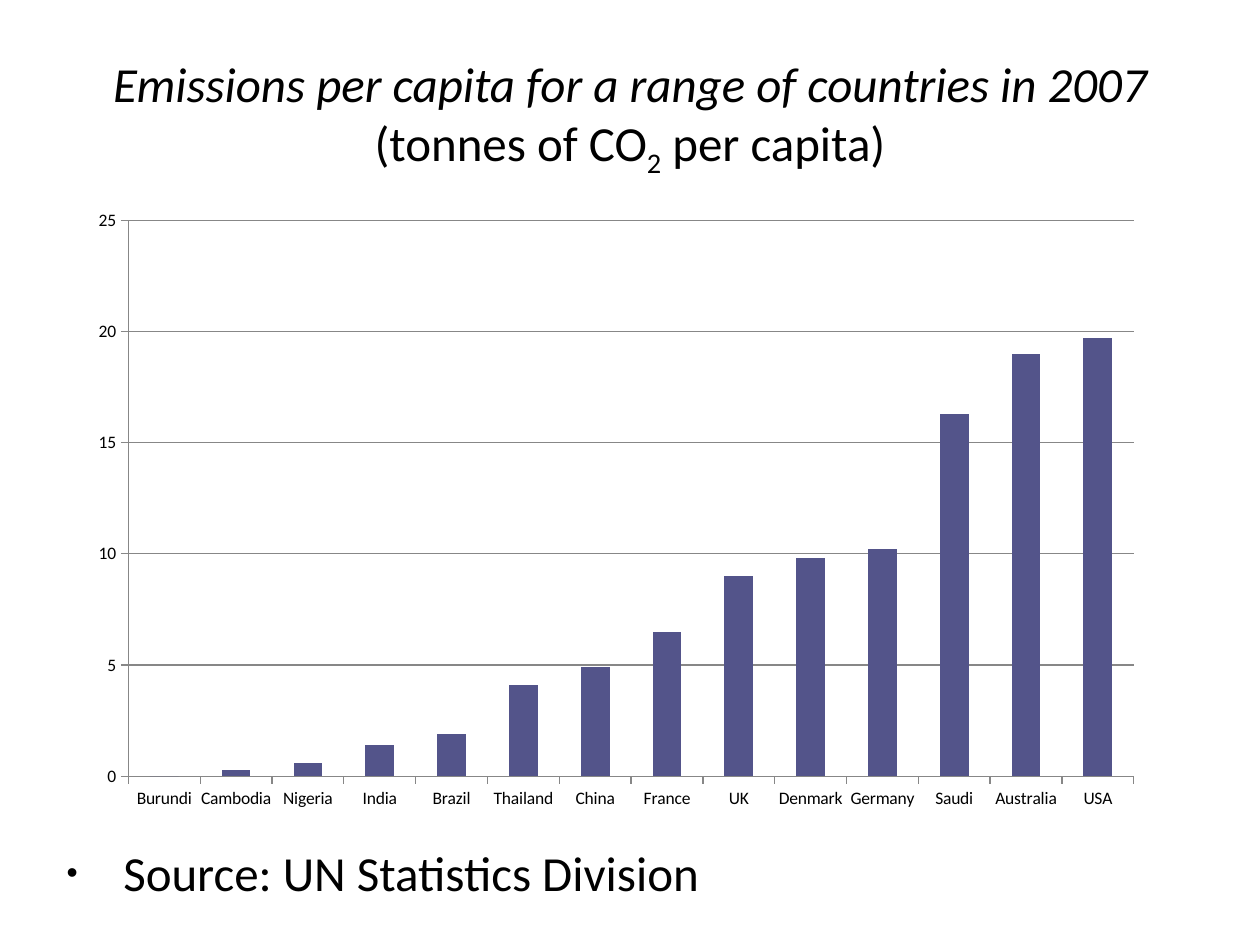
from dataclasses import dataclass
from lxml.etree import SubElement as Sub
from pptx import Presentation
from pptx.chart.data import CategoryChartData as Data
from pptx.dml.color import RGBColor as RGB
from pptx.enum.chart import XL_CHART_TYPE as Kind, XL_TICK_MARK as Tick
from pptx.enum.text import MSO_ANCHOR as Anchor, PP_ALIGN as Align
from pptx.oxml.ns import qn
from pptx.util import Pt

PX = 9144


@dataclass(frozen=True)
class Theme:
    font: str = "Calibri"
    ink: RGB = RGB(0, 0, 0)
    bar: RGB = RGB(0x53, 0x54, 0x8A)
    grid: RGB = RGB(0x87, 0x87, 0x87)
    text: int = 28
    label: int = 10


THEME = Theme()

RATES = {
    "Burundi": 0, "Cambodia": 0.3, "Nigeria": 0.6, "India": 1.4,
    "Brazil": 1.9, "Thailand": 4.1, "China": 4.9, "France": 6.5,
    "UK": 9, "Denmark": 9.8, "Germany": 10.2, "Saudi": 16.3,
    "Australia": 19, "USA": 19.7,
}


def emu(box):
    return [n * PX for n in box]


def style(font, size):
    font.name = THEME.font
    font.size = Pt(size)
    font.color.rgb = THEME.ink


def add_run(para, text, italic=False, base=0):
    run = para.add_run()
    run.text = text
    style(run.font, THEME.text)
    run.font.italic = italic
    if base:
        run.font._element.set("baseline", str(base * 1000))


def add_frame(slide, box, anchor):
    frame = slide.shapes.add_textbox(*emu(box)).text_frame
    frame.word_wrap = True
    frame.vertical_anchor = anchor
    return frame.paragraphs[0]


def add_title(slide, box):
    para = add_frame(slide, box, Anchor.MIDDLE)
    para.alignment = Align.CENTER
    add_run(para, "Emissions per capita for a range of countries in 2007 ", italic=True)
    add_run(para, "(tonnes of CO")
    add_run(para, "2", base=-25)
    add_run(para, " per capita)")


def add_source(slide, box):
    para = add_frame(slide, box, Anchor.TOP)
    props = para._p.get_or_add_pPr()
    props.set("marL", str(60 * PX))
    props.set("indent", str(-45 * PX))
    space = Sub(props, qn("a:spcBef"))
    Sub(space, qn("a:spcPct"), val="20000")
    color = Sub(props, qn("a:buClr"))
    Sub(color, qn("a:srgbClr"), val=str(THEME.ink))
    Sub(props, qn("a:buSzPct"), val="65000")
    Sub(props, qn("a:buFont"), typeface="Arial")
    Sub(props, qn("a:buChar"), char="•")
    add_run(para, "Source: UN Statistics Division")


def set_plot(chart, area):
    plot = chart._chartSpace.chart.plotArea
    for old in plot.findall(qn("c:layout")):
        plot.remove(old)
    layout = Sub(plot, qn("c:layout"))
    plot.insert(0, layout)
    manual = Sub(layout, qn("c:manualLayout"))
    rules = [("layoutTarget", "inner"), ("xMode", "edge"), ("yMode", "edge")]
    for name, val in rules + list(zip("xywh", area)):
        Sub(manual, qn("c:" + name), val=str(val))


def add_bars(slide, box):
    data = Data()
    data.categories = list(RATES)
    data.add_series("Series 1", list(RATES.values()))
    chart = slide.shapes.add_chart(Kind.COLUMN_STACKED, *emu(box), data).chart
    chart.has_legend = False
    chart.has_title = False
    style(chart.font, THEME.label)
    set_plot(chart, (0.05, 0.04, 0.93, 0.89))
    plot = chart.plots[0]
    plot.gap_width = 150
    plot.overlap = 100
    plot.vary_by_categories = False
    fill = plot.series[0].format.fill
    fill.solid()
    fill.fore_color.rgb = THEME.bar
    rate = chart.value_axis
    rate.minimum_scale, rate.maximum_scale, rate.major_unit = 0, 25, 5
    rate.has_major_gridlines = True
    for axis in (chart.category_axis, rate):
        axis.major_tick_mark = Tick.OUTSIDE
        axis.minor_tick_mark = Tick.NONE
    for part in (chart.category_axis, rate, rate.major_gridlines):
        part.format.line.color.rgb = THEME.grid
        part.format.line.width = Pt(0.75)


def main():
    deck = Presentation()
    deck.slide_width, deck.slide_height = emu((1000, 750))
    slide = deck.slides.add_slide(deck.slide_layouts[6])
    add_title(slide, (50, 30, 900, 125))
    add_source(slide, (28, 664, 929, 63))
    add_bars(slide, (59, 155, 858, 496))
    deck.save("out.pptx")


if __name__ == "__main__":
    main()
